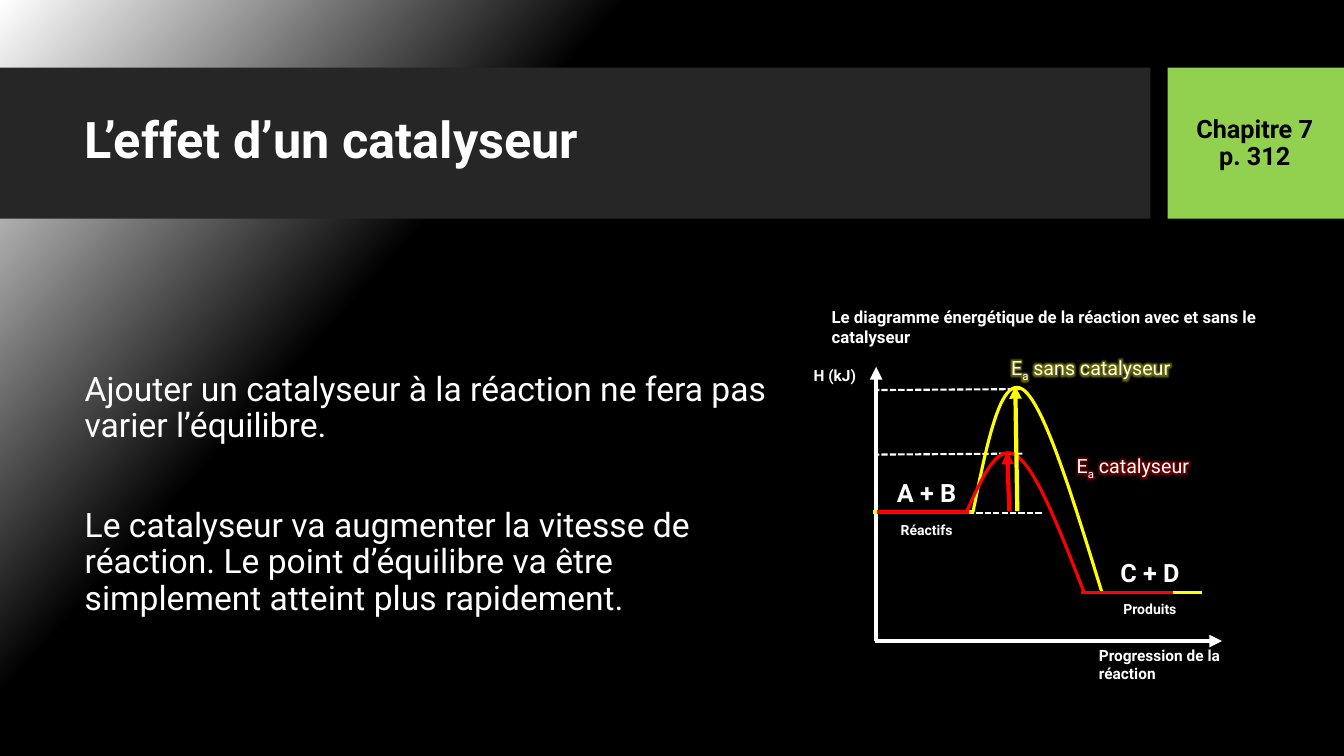
from dataclasses import dataclass

from lxml import etree
from pptx import Presentation
from pptx import util as u
from pptx.dml.color import RGBColor
from pptx.enum import dml, shapes, text
from pptx.oxml import ns

FONT = "Roboto"
WHITE = RGBColor(0xFF, 0xFF, 0xFF)
BLACK = RGBColor(0, 0, 0)
CHARCOAL = RGBColor(0x26, 0x26, 0x26)
GREEN = RGBColor(0x92, 0xD0, 0x50)
YELLOW = RGBColor(0xFF, 0xFF, 0x00)
RED = RGBColor(0xFF, 0, 0)
LEFT, CENTER = text.PP_ALIGN.LEFT, text.PP_ALIGN.CENTER

Point = tuple[float, float]


@dataclass
class Band:
    left: float
    width: float
    color: RGBColor


@dataclass
class Label:
    box: tuple[float, float, float, float]
    words: str
    size: int
    align: text.PP_ALIGN = LEFT


@dataclass
class Energy:
    box: tuple[float, float, float, float]
    words: str
    glow: RGBColor


@dataclass
class Segment:
    start: Point
    end: Point
    color: RGBColor
    width: float
    arrow: bool = False
    dashed: bool = False


@dataclass
class Curve:
    start: Point
    beziers: list[tuple[Point, Point, Point]]
    color: RGBColor


BANDS = [Band(0, 11.41, CHARCOAL), Band(11.58, 1.75, GREEN)]

PARAGRAPHS = [
    "Ajouter un catalyseur à la réaction ne fera pas varier l’équilibre.",
    "Le catalyseur va augmenter la vitesse de réaction. "
    "Le point d’équilibre va être simplement atteint plus rapidement.",
]

GUIDES_AND_AXES = [
    Segment((10.14, 4.5), (8.69, 4.51), WHITE, 1.5, dashed=True),
    Segment((10.33, 5.09), (8.72, 5.09), WHITE, 1.5, dashed=True),
    Segment((10.14, 3.86), (8.69, 3.87), WHITE, 1.5, dashed=True),
    Segment((8.69, 6.36), (8.69, 3.64), WHITE, 3, arrow=True),
    Segment((8.68, 6.36), (12.12, 6.36), WHITE, 3, arrow=True),
]

LABELS = [
    Label((7.97, 3.58, 0.78, 0.29), "H (kJ)", 11),
    Label((10.8, 6.36, 1.67, 0.47), "Progression de la réaction", 11),
    Label((8.69, 4.69, 1, 0.4), "A + B", 18, CENTER),
    Label((10.9, 5.48, 1.01, 0.4), "C + D", 18, CENTER),
    Label((8.15, 2.99, 4.85, 0.5),
          "Le diagramme énergétique de la réaction avec et sans le catalyseur", 12),
    Label((8.69, 5.12, 1, 0.27), "Réactifs", 10, CENTER),
    Label((10.9, 5.91, 1.01, 0.27), "Produits", 10, CENTER),
]

PROFILES = [
    Segment((10.92, 5.88), (11.92, 5.88), YELLOW, 2.25),
    Segment((8.66, 5.08), (9.66, 5.08), YELLOW, 2.25),
    Curve((9.65, 5.08), [((9.79, 4.4), (9.92, 3.73), (10.14, 3.86)),
                         ((10.35, 3.99), (10.64, 4.94), (10.93, 5.88))], YELLOW),
    Curve((9.58, 5.09), [((9.74, 4.74), (9.89, 4.39), (10.08, 4.52)),
                         ((10.28, 4.65), (10.51, 5.26), (10.75, 5.87))], RED),
    Segment((10.72, 5.88), (11.63, 5.88), RED, 2.25),
    Segment((8.7, 5.08), (9.61, 5.08), RED, 2.25),
    Segment((10.09, 5.07), (10.07, 3.83), YELLOW, 3, arrow=True),
    Segment((10.01, 5.07), (9.99, 4.48), RED, 3, arrow=True),
]

ENERGIES = [
    Energy((9.93, 3.48, 2.44, 0.34), " sans catalyseur", YELLOW),
    Energy((10.58, 4.45, 2.44, 0.34), " catalyseur", RED),
]


def add_span(para, words: str, size: int, color: RGBColor = WHITE, bold: bool = False):
    span = para.add_run()
    span.text = words
    span.font.size = u.Pt(size)
    span.font.name = FONT
    span.font.bold = bold
    span.font.color.rgb = color
    return span


def place(box, bounds) -> None:
    box.left, box.top, box.width, box.height = map(u.Inches, bounds)


def add_box(slide, bounds):
    box = slide.shapes.add_textbox(*map(u.Inches, bounds))
    box.text_frame.word_wrap = True
    return box.text_frame


def draw_band(slide, band: Band) -> None:
    box = slide.shapes.add_shape(shapes.MSO_SHAPE.RECTANGLE, u.Inches(band.left),
                                 u.Inches(0.67), u.Inches(band.width), u.Inches(1.5))
    box.shadow.inherit = False
    box.fill.solid()
    box.fill.fore_color.rgb = band.color
    box.line.fill.background()
    slide.shapes._spTree.insert(2, box._element)


def draw_label(slide, label: Label) -> None:
    frame = add_box(slide, label.box)
    frame.auto_size = text.MSO_AUTO_SIZE.SHAPE_TO_FIT_TEXT
    para = frame.paragraphs[0]
    para.alignment = label.align
    add_span(para, label.words, label.size, bold=True)


def draw_energy(slide, energy: Energy) -> None:
    frame = add_box(slide, energy.box)
    frame.auto_size = text.MSO_AUTO_SIZE.SHAPE_TO_FIT_TEXT
    for words, baseline in (("E", 0), ("a", -25000), (energy.words, 0)):
        props = add_span(frame.paragraphs[0], words, 14).font._element
        if baseline:
            props.set("baseline", str(baseline))
        effects = etree.Element(ns.qn("a:effectLst"))
        glow = etree.SubElement(effects, ns.qn("a:glow"), rad="101600")
        tint = etree.SubElement(glow, ns.qn("a:srgbClr"), val=str(energy.glow))
        etree.SubElement(tint, ns.qn("a:alpha"), val="40000")
        props.find(ns.qn("a:solidFill")).addnext(effects)


def draw_segment(slide, segment: Segment) -> None:
    line = slide.shapes.add_connector(shapes.MSO_CONNECTOR.STRAIGHT,
                                      *map(u.Inches, segment.start + segment.end))
    line.line.color.rgb = segment.color
    line.line.width = u.Pt(segment.width)
    if segment.dashed:
        line.line.dash_style = dml.MSO_LINE.SQUARE_DOT
    if segment.arrow:
        etree.SubElement(line.line._get_or_add_ln(), ns.qn("a:tailEnd"), type="triangle")
    etree.SubElement(line._element.spPr, ns.qn("a:effectLst"))


def draw_curve(slide, curve: Curve, steps: int = 24) -> None:
    points, start = [], curve.start
    for first, second, end in curve.beziers:
        for step in range(1, steps + 1):
            t = step / steps
            points.append(tuple(
                u.Inches((1 - t) ** 3 * a + 3 * (1 - t) ** 2 * t * b
                         + 3 * (1 - t) * t ** 2 * c + t ** 3 * d)
                for a, b, c, d in zip(start, first, second, end)))
        start = end
    builder = slide.shapes.build_freeform(*map(u.Inches, curve.start))
    builder.add_line_segments(points, close=False)
    outline = builder.convert_to_shape()
    outline.shadow.inherit = False
    outline.fill.background()
    outline.line.color.rgb = curve.color
    outline.line.width = u.Pt(2.25)


def paint_background(slide) -> None:
    fill = slide.background.fill
    fill.gradient()
    fill.gradient_angle = 318
    for stop, color, position in zip(fill.gradient_stops, (WHITE, BLACK), (0, 0.31)):
        stop.color.rgb = color
        stop.position = position


def fill_title(slide) -> None:
    title = slide.shapes.title
    place(title, (0.74, 0.82, 10.51, 1.18))
    frame = title.text_frame
    frame.auto_size = text.MSO_AUTO_SIZE.NONE
    frame.vertical_anchor = text.MSO_ANCHOR.MIDDLE
    para = frame.paragraphs[0]
    para.alignment, para.line_spacing = LEFT, 0.9
    add_span(para, "L’effet d’un catalyseur", 36, bold=True)


def fill_body(slide) -> None:
    body = slide.placeholders[1]
    place(body, (0.74, 2.99, 7.23, 3.84))
    frame = body.text_frame
    frame.auto_size = text.MSO_AUTO_SIZE.NONE
    frame.vertical_anchor = text.MSO_ANCHOR.MIDDLE
    for index, words in enumerate(PARAGRAPHS):
        para = frame.add_paragraph() if index else frame.paragraphs[0]
        props = para._p.get_or_add_pPr()
        props.set("marL", "0")
        props.set("indent", "0")
        etree.SubElement(props, ns.qn("a:buNone"))
        para.line_spacing = 0.9
        para.space_before = u.Pt(45.5 if index else 0)
        add_span(para, words, 24)


def draw_chapter(slide) -> None:
    frame = add_box(slide, (11.56, 0.67, 1.77, 1.51))
    frame.vertical_anchor = text.MSO_ANCHOR.MIDDLE
    for index, words in enumerate(("Chapitre 7", "p. 312")):
        para = frame.add_paragraph() if index else frame.paragraphs[0]
        para.alignment, para.line_spacing = CENTER, 0.9
        add_span(para, words, 18, BLACK, bold=True)


def main() -> None:
    deck = Presentation()
    deck.slide_width, deck.slide_height = u.Inches(13.33), u.Inches(7.5)
    page = deck.slides.add_slide(deck.slide_layouts[1])
    paint_background(page)
    for band in BANDS:
        draw_band(page, band)
    fill_title(page)
    draw_chapter(page)
    fill_body(page)
    for segment in GUIDES_AND_AXES:
        draw_segment(page, segment)
    for label in LABELS:
        draw_label(page, label)
    for part in PROFILES:
        if isinstance(part, Curve):
            draw_curve(page, part)
        else:
            draw_segment(page, part)
    for energy in ENERGIES:
        draw_energy(page, energy)
    deck.save("out.pptx")


if __name__ == "__main__":
    main()
